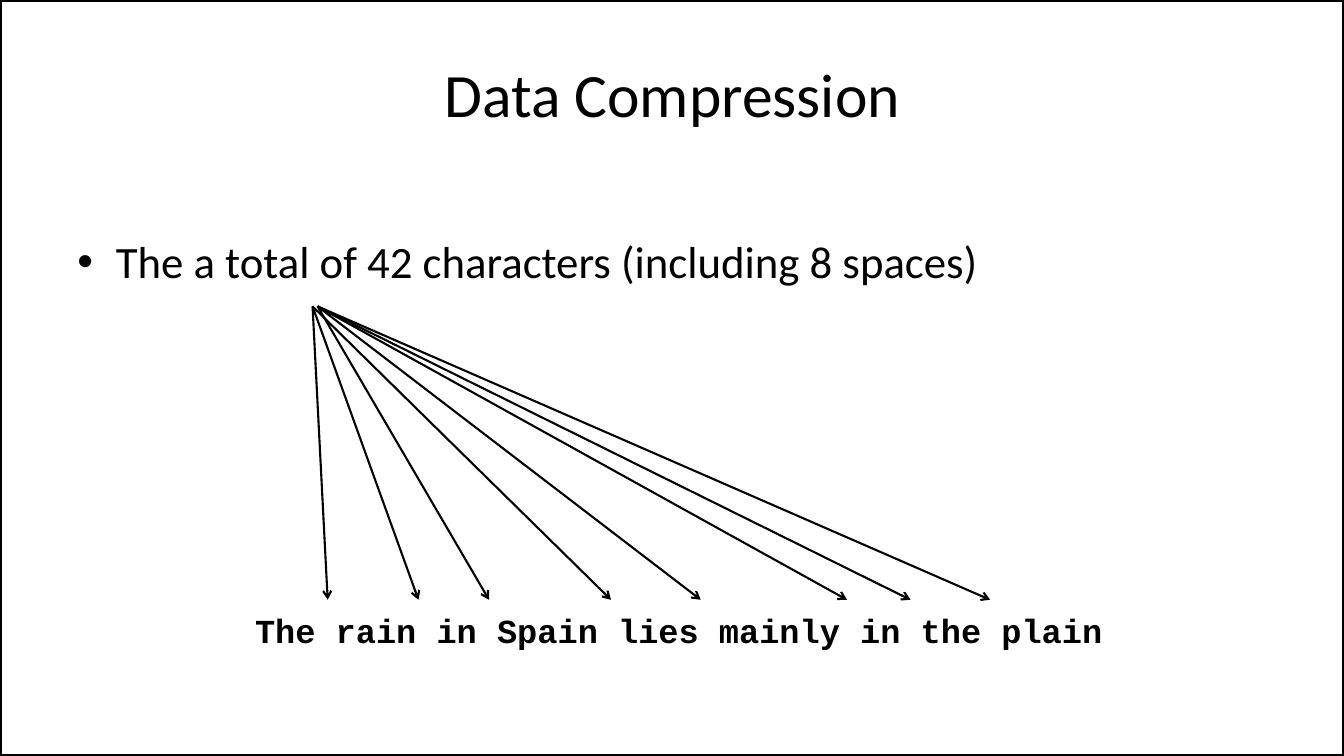
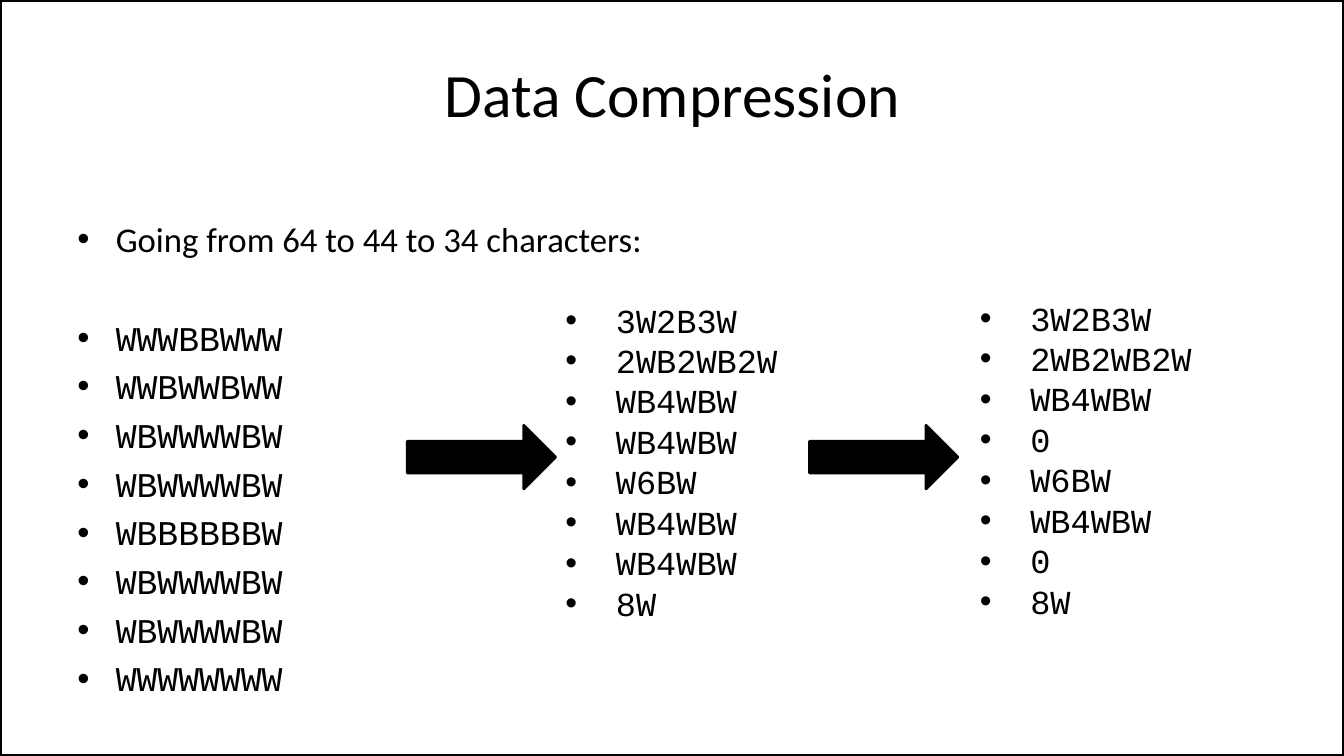
import pptx
import pptx.dml.color
import pptx.enum.shapes
import pptx.enum.text
import pptx.oxml
import pptx.oxml.ns
import pptx.util

Inches = pptx.util.Inches
Pt = pptx.util.Pt
Align = pptx.enum.text.PP_ALIGN
Anchor = pptx.enum.text.MSO_ANCHOR
Shape = pptx.enum.shapes.MSO_SHAPE

# Shared style
WIDTH, HEIGHT = 13.33, 7.5
INK, PAPER = "000000", "FFFFFF"
SANS, MONO = "Calibri", "Courier New"
MARGIN, BODY_WIDTH = 0.67, 12
TITLE_BOX = (MARGIN, 0.3, BODY_WIDTH, 1.25)
TITLE_FONT = {"name": SANS, "size": Pt(44), "bold": False}
BODY_INDENT, LIST_INDENT = 0.38, 0.5


def color(value):
    return pptx.dml.color.RGBColor.from_string(value)


def add_xml(parent, tag, **attributes):
    element = pptx.oxml.parse_xml(f"<a:{tag} {pptx.oxml.ns.nsdecls('a')}/>")
    for name, value in attributes.items():
        element.set(name, value)
    parent.append(element)


def style_text(target, values):
    for name, value in values.items():
        setattr(target.font, name, value)
    target.font.color.rgb = color(INK)


def style_line(line, width):
    line.color.rgb = color(INK)
    line.width = Pt(width)


def add_text(page, box, lines, font, indent=0, bullet=True, **layout):
    """Place one paragraph per line in the given box."""
    text_box = page.shapes.add_textbox(*map(Inches, box))
    frame = text_box.text_frame
    frame.word_wrap = True
    for index, line in enumerate(lines):
        para = frame.paragraphs[0] if index == 0 else frame.add_paragraph()
        for name, value in layout.items():
            setattr(para, name, value)
        properties = para._p.get_or_add_pPr()
        properties.set("marL", str(Inches(indent)))
        if bullet:
            properties.set("indent", str(-Inches(indent)))
            add_xml(properties, "buFont", typeface="Arial")
            add_xml(properties, "buChar", char="•")
        span = para.add_run()
        span.text = line
        style_text(span, font)


def add_page(deck, title):
    """Add a white page with a centred title."""
    page = deck.slides.add_slide(deck.slide_layouts[5])
    page.background.fill.solid()
    page.background.fill.fore_color.rgb = color(PAPER)
    holder = page.shapes.title
    for name, value in zip(("left", "top", "width", "height"), TITLE_BOX):
        setattr(holder, name, Inches(value))
    frame = holder.text_frame
    frame.text = title
    frame.vertical_anchor = Anchor.MIDDLE
    frame.paragraphs[0].alignment = Align.CENTER
    style_text(frame.paragraphs[0].runs[0], TITLE_FONT)
    return page


def add_frame(page):
    frame = page.shapes.add_shape(Shape.RECTANGLE, 0, 0, Inches(WIDTH), Inches(HEIGHT))
    frame.shadow.inherit = False
    frame.fill.background()
    style_line(frame.line, 3)


def add_pointer(page, start, end):
    pointer = page.shapes.add_connector(
        pptx.enum.shapes.MSO_CONNECTOR.STRAIGHT, *map(Inches, start + end))
    style_line(pointer.line, 1.5)
    add_xml(pointer.line._get_or_add_ln(), "tailEnd", type="arrow")
    add_xml(pointer._element.spPr, "effectLst")


def add_block_arrow(page, left, top):
    arrow = page.shapes.add_shape(
        Shape.RIGHT_ARROW, *map(Inches, (left, top, 1.47, 0.63)))
    arrow.shadow.inherit = False
    arrow.fill.solid()
    arrow.fill.fore_color.rgb = color(INK)
    style_line(arrow.line, 2)


def build_spaces_page(deck):
    """Point from the word "spaces" count to each gap in the sentence."""
    page = add_page(deck, "Data Compression")
    add_text(page, (MARGIN, 2.27, BODY_WIDTH, 0.64),
             ["The a total of 42 characters (including 8 spaces)"],
             {"name": SANS, "size": Pt(32)}, BODY_INDENT)
    add_text(page, (MARGIN, 6, BODY_WIDTH, 0.5),
             ["The rain in Spain lies mainly in the plain"],
             {"name": MONO, "size": Pt(24), "bold": True},
             indent=0.12, bullet=False, alignment=Align.CENTER)
    pointers = [(3.1, 3.25), (3.1, 4.15), (3.15, 4.85), (3.1, 6.06),
                (3.15, 6.95), (3.15, 8.4), (3.15, 9.03), (3.15, 9.82)]
    for start, end in pointers:
        add_pointer(page, (start, 3.04), (end, 5.95))
    add_frame(page)


def build_encoding_page(deck):
    """Show the bitmap rows and two rounds of encoding, left to right."""
    page = add_page(deck, "Data Compression")
    add_text(page, (MARGIN, 2.11, BODY_WIDTH, 0.52),
             ["Going from 64 to 44 to 34 characters:"],
             {"name": SANS, "size": Pt(24.8)}, BODY_INDENT)
    # Columns: box, text size, line pitch, indent, rows
    columns = [
        ((MARGIN, 3.02, 3.2, 3.97), 24.8, 34.8, BODY_INDENT,
         "WWWBBWWW WWBWWBWW WBWWWWBW WBWWWWBW WBBBBBBW WBWWWWBW WBWWWWBW WWWWWWWW"),
        ((5.51, 2.92, 3, 3.33), 24, 28.9, LIST_INDENT,
         "3W2B3W 2WB2WB2W WB4WBW WB4WBW W6BW WB4WBW WB4WBW 8W"),
        ((9.62, 2.9, 3.45, 3.33), 24, 28.9, LIST_INDENT,
         "3W2B3W 2WB2WB2W WB4WBW 0 W6BW WB4WBW 0 8W"),
    ]
    for box, size, pitch, indent, rows in columns:
        add_text(page, box, rows.split(), {"name": MONO, "size": Pt(size)},
                 indent, line_spacing=Pt(pitch))
    for left in (4.04, 8.03):
        add_block_arrow(page, left, 4.22)
    add_frame(page)


def main():
    deck = pptx.Presentation()
    deck.slide_width, deck.slide_height = Inches(WIDTH), Inches(HEIGHT)
    build_spaces_page(deck)
    build_encoding_page(deck)
    deck.save("out.pptx")


if __name__ == "__main__":
    main()
